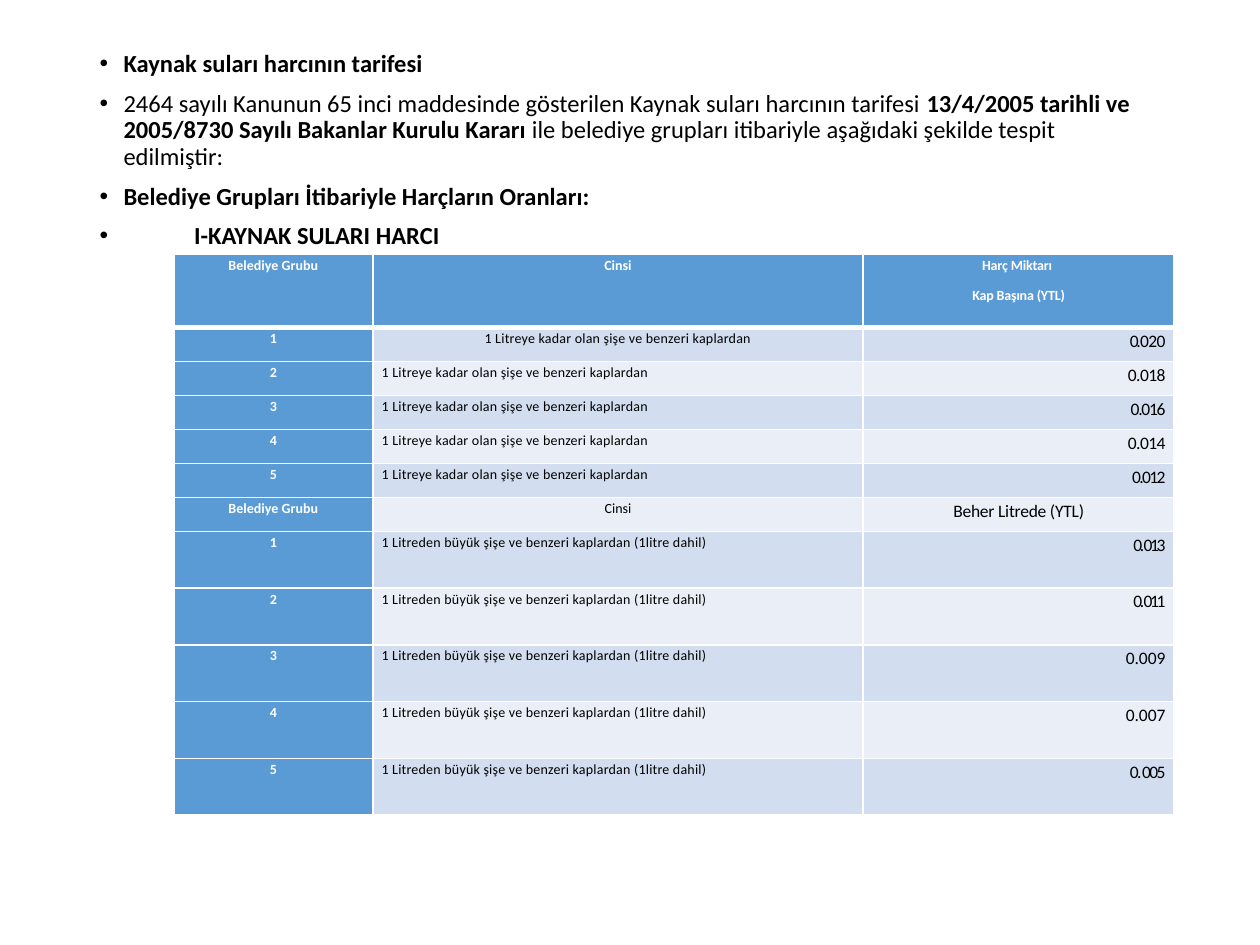
from dataclasses import dataclass
from lxml.etree import SubElement as Sub
from pptx import Presentation
from pptx.dml.color import RGBColor as RGB
from pptx.enum.text import MSO_AUTO_SIZE as Auto, PP_ALIGN as Align
from pptx.oxml.ns import qn
from pptx.util import Inches, Pt


@dataclass(frozen=True)
class Theme:
    font: str = "Calibri"
    ink: str = "000000"
    white: str = "FFFFFF"
    head: str = "5B9BD5"
    odd: str = "D2DEEF"
    even: str = "EAEFF7"
    body: float = 14
    small: float = 8
    value: float = 10
    thin: float = 1
    thick: float = 3


theme = Theme()

POINTS = [
    [("Kaynak suları harcının tarifesi", True)],
    [("2464 sayılı Kanunun 65 inci maddesinde gösterilen Kaynak suları harcının tarifesi ", False),
     ("13/4/2005 tarihli ve 2005/8730 Sayılı Bakanlar Kurulu Kararı ", True),
     ("ile belediye grupları itibariyle aşağıdaki şekilde tespit edilmiştir:", False)],
    [("Belediye Grupları İtibariyle Harçların Oranları:", True)],
    [("\tI-KAYNAK SULARI HARCI", True)],
]
GROUP, KIND = "Belediye Grubu", "Cinsi"
SMALL = [("1 Litreye kadar olan şişe ve benzeri kaplardan", 0.1)]
LARGE = [("1", 0), (" Litreden büyük şişe ve benzeri kaplardan (1litre dahil)", 0.1)]
SMALL_FEES = [("0. 0 2 0", -1.3), ("0.018", -0.3), ("0.016", -0.7), ("0.014", -0.3), ("0.012", -0.9)]
LARGE_FEES = [("0. 013", -1.3), ("0. 011", -1.3), ("0.009", 0), ("0.007", 0), ("0. 005", -0.9)]
COLS = [1.58, 3.89, 2.47]
ROWS = [0.58] + [0.27] * 6 + [0.45] * 5


def add_run(para, text, size, color, bold, gap=0):
    run = para.add_run()
    run.text = text
    font = run.font
    font.name, font.size, font.bold = theme.font, Pt(size), bold
    font.color.rgb = RGB.from_string(color)
    if gap:
        font._element.set("spc", str(round(gap * 100)))


def add_points(slide, box):
    body = slide.placeholders[1]
    body.left, body.top, body.width, body.height = map(Inches, box)
    frame = body.text_frame
    frame.auto_size = Auto.NONE
    for i, parts in enumerate(POINTS):
        para = frame.add_paragraph() if i else frame.paragraphs[0]
        para.line_spacing, para.space_before = 0.9, Pt(7.5)
        props = para._p.get_or_add_pPr()
        props.set("marL", str(Inches(0.19)))
        props.set("indent", str(-Inches(0.19)))
        Sub(props, qn("a:buFont"), typeface="Arial")
        Sub(props, qn("a:buChar"), char="•")
        tabs = Sub(props, qn("a:tabLst"))
        Sub(tabs, qn("a:tab"), pos=str(Inches(0.75)), algn="l")
        for text, bold in parts:
            add_run(para, text, theme.body, theme.ink, bold)


def add_edges(cell, row):
    props = cell._tc.get_or_add_tcPr()
    for side in ("L", "R", "T", "B"):
        heavy = (row, side) in ((0, "B"), (1, "T"))
        width = theme.thick if heavy else theme.thin
        line = Sub(props, qn(f"a:ln{side}"), w=str(Pt(width)))
        fill = Sub(line, qn("a:solidFill"))
        Sub(fill, qn("a:srgbClr"), val=theme.white)


def fill_cell(cell, row, col, paras, align):
    head = row == 0 or col == 0
    add_edges(cell, row)
    cell.margin_left = cell.margin_right = Inches(0.07)
    cell.margin_top = cell.margin_bottom = 0
    cell.fill.solid()
    shade = theme.head if head else theme.odd if row % 2 else theme.even
    cell.fill.fore_color.rgb = RGB.from_string(shade)
    size = theme.value if col == 2 and not head else theme.small
    color = theme.white if head else theme.ink
    frame = cell.text_frame
    for i, runs in enumerate(paras):
        para = frame.add_paragraph() if i else frame.paragraphs[0]
        para.alignment, para.line_spacing, para.space_before = align, 1.15, Pt(6)
        for text, gap in runs:
            add_run(para, text, size, color, head, gap)


def list_rows():
    mid, left, right = Align.CENTER, Align.LEFT, Align.RIGHT
    group, kind = ([[(GROUP, 0)]], mid), ([[(KIND, 0)]], mid)

    def rate(num, kind, fee):
        side = mid if kind is SMALL and num == 1 else left
        return [([[(str(num), 0)]], mid), ([kind], side), ([[fee]], right)]

    yield [group, kind, ([[("Harç Miktarı ", -0.1)], [("Kap Başına (YTL)", -0.1)]], mid)]
    for num, fee in enumerate(SMALL_FEES, 1):
        yield rate(num, SMALL, fee)
    yield [group, kind, ([[("Beher Litrede (YTL)", -0.1)]], mid)]
    for num, fee in enumerate(LARGE_FEES, 1):
        yield rate(num, LARGE, fee)


def add_rates(slide, box):
    table = slide.shapes.add_table(len(ROWS), len(COLS), *map(Inches, box)).table
    for col, width in zip(table.columns, COLS):
        col.width = Inches(width)
    for row, height in zip(table.rows, ROWS):
        row.height = Inches(height)
    for r, cells in enumerate(list_rows()):
        for c, (paras, align) in enumerate(cells):
            fill_cell(table.cell(r, c), r, c, paras, align)


def main():
    deck = Presentation()
    deck.slide_width, deck.slide_height = Inches(10), Inches(7.5)
    slide = deck.slides.add_slide(deck.slide_layouts[1])
    title = slide.shapes.title._element
    title.getparent().remove(title)
    add_points(slide, (0.69, 0.36, 8.62, 6.39))
    add_rates(slide, (1.38, 2.02, sum(COLS), sum(ROWS)))
    deck.save("out.pptx")


if __name__ == "__main__":
    main()
